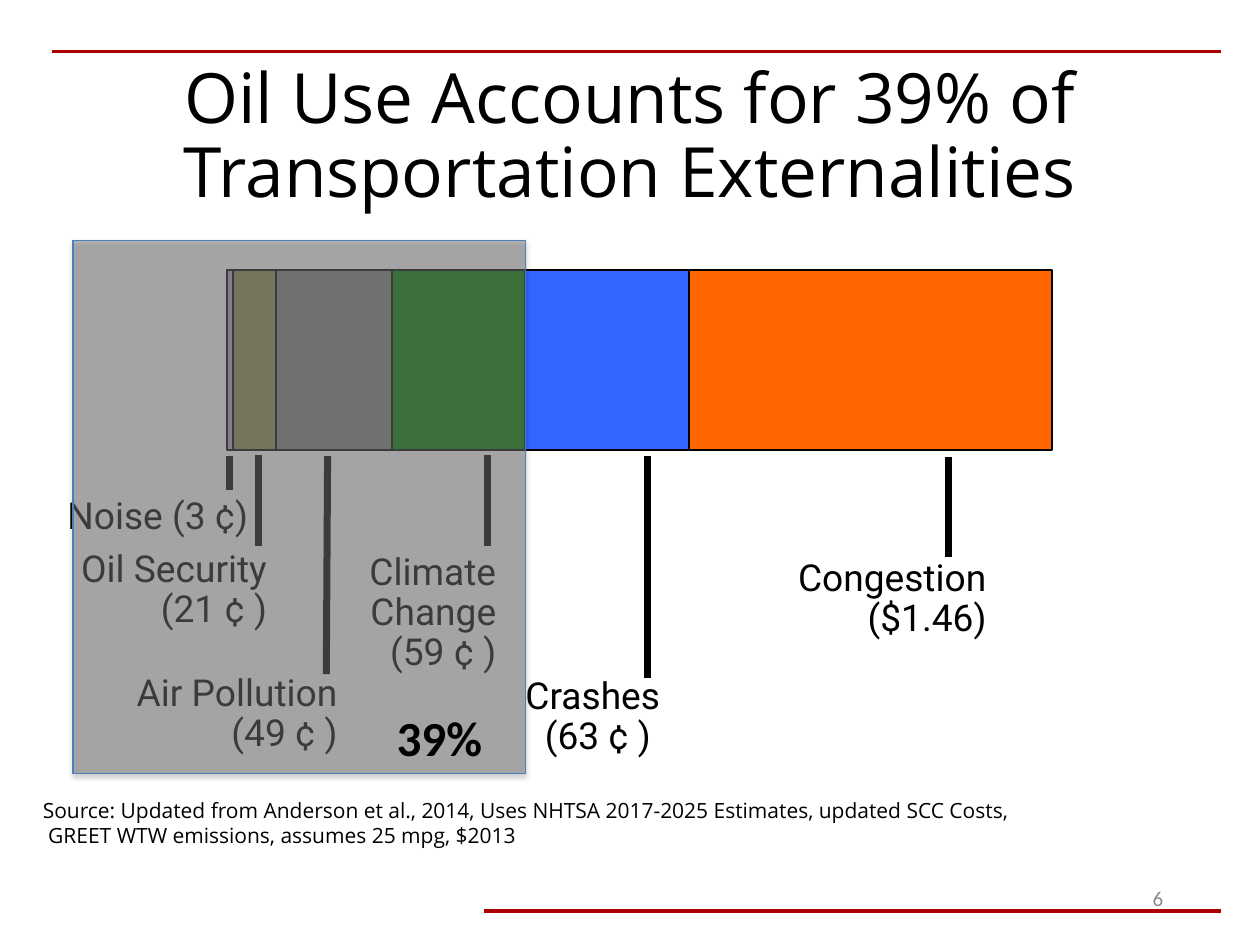
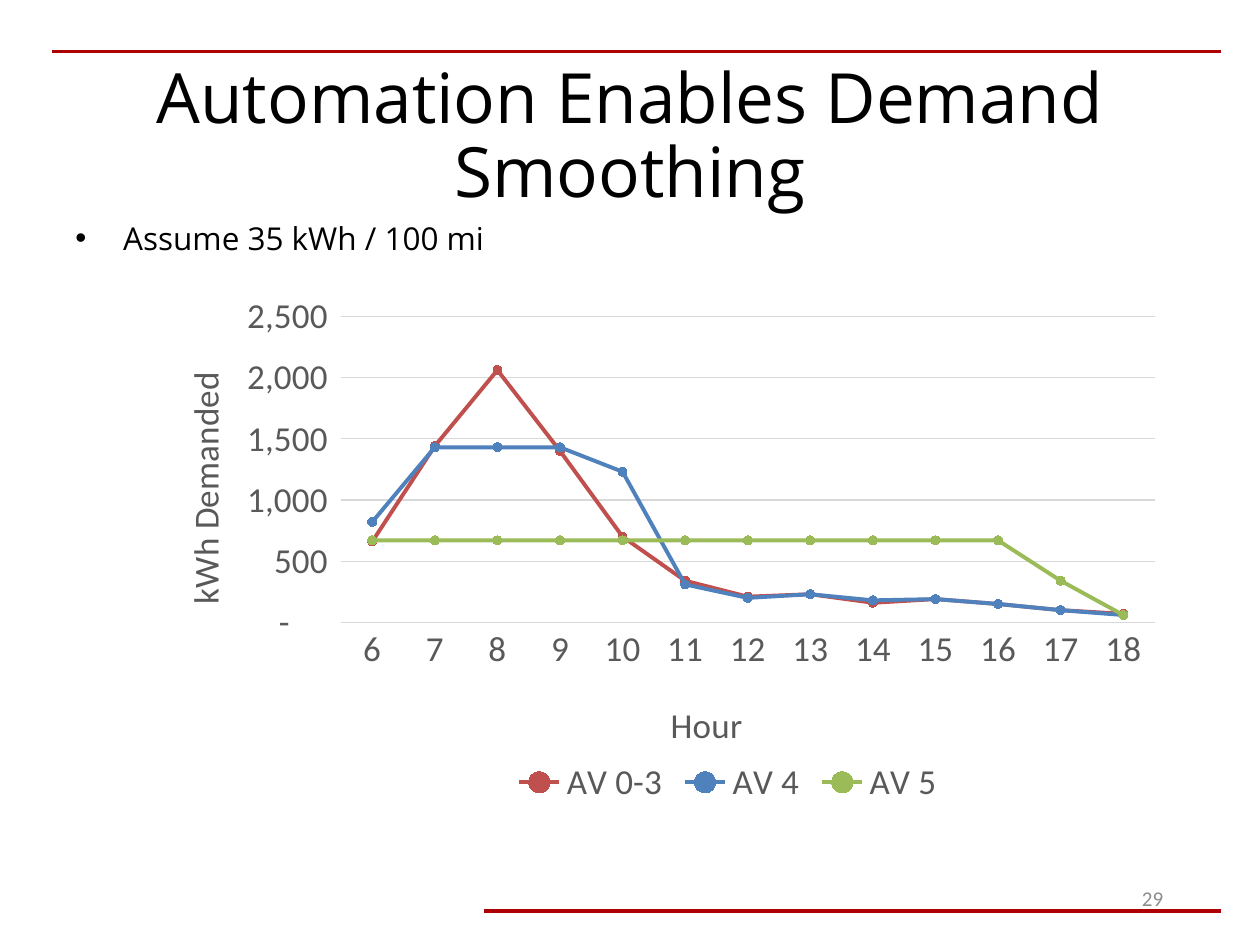
from lxml import etree
from pptx import Presentation
from pptx.chart.data import CategoryChartData
from pptx.dml.color import RGBColor
from pptx.enum.chart import XL_CHART_TYPE, XL_LEGEND_POSITION, XL_MARKER_STYLE, XL_TICK_MARK
from pptx.enum.shapes import MSO_CONNECTOR, MSO_SHAPE
from pptx.enum.text import MSO_ANCHOR, PP_ALIGN
from pptx.oxml import parse_xml
from pptx.oxml.ns import nsdecls, qn
from pptx.util import Inches, Pt

COLORS = {
    "rule": "AC0004", "text": "000000", "number": "8C8C8C",
    "congestion": "FF6600", "crashes": "3366FF", "climate": "008000",
    "security": "948A54", "pollution": "808080", "noise": "B3A2C7",
    "overlay": "777777", "overlay_line": "4B7EBC",
    "chart_text": "595959", "grid": "D9D9D9",
    "AV 0-3": "C0504D", "AV 4": "4F81BD", "AV 5": "9BBB59",
}
TITLE_FONT, LABEL_FONT, NUMBER_FONT = "Open Sans", "Roboto", "Calibri"

# Bar segments from back to front: colour, left, width
SEGMENTS = [
    ("congestion", 5.47, 2.88), ("crashes", 4.17, 1.3), ("climate", 2.98, 1.19),
    ("security", 1.84, 0.41), ("pollution", 2.19, 0.92), ("noise", 1.8, 0.05),
]
# Labels: text, left, top, width, height, alignment
LABELS = [
    ("Oil Security (21 ¢ )", 0.58, 4.37, 1.54, 0.5, PP_ALIGN.RIGHT),
    ("Air Pollution (49 ¢ )", 1.08, 5.35, 1.6, 0.74, PP_ALIGN.RIGHT),
    ("Climate Change (59 ¢ )", 2.68, 4.39, 1.26, 0.99, PP_ALIGN.RIGHT),
    ("Congestion ($1.46)", 6.21, 4.44, 1.62, 0.64, PP_ALIGN.RIGHT),
    ("Crashes (63 ¢ ) ", 4, 5.38, 1.24, 0.5, PP_ALIGN.RIGHT),
    ("Noise (3 ¢) ", 0.47, 3.95, 1.64, 0.25, PP_ALIGN.CENTER),
]
# Leader lines: start x, start y, end x, end y
LEADERS = [
    (1.82, 3.62, 1.82, 3.89), (2.05, 3.61, 2.05, 4.33), (7.53, 3.63, 7.53, 4.42),
    (5.14, 3.62, 5.14, 5.38), (2.6, 3.62, 2.59, 5.35), (3.87, 3.61, 3.87, 4.33),
]
DEMAND = {
    "AV 0-3": (660, 1440, 2060, 1400, 700, 340, 210, 230, 160, 190, 150, 100, 70),
    "AV 4": (820, 1430, 1430, 1430, 1230, 310, 200, 230, 180, 190, 150, 100, 60),
    "AV 5": (670,) * 11 + (340, 60),
}


def color(name):
    return RGBColor.from_string(COLORS[name])


def style_font(font, size, name, color_name="text", bold=False):
    font.size, font.name, font.bold = Pt(size), name, bold
    font.color.rgb = color(color_name)


def add_text(slide, box, lines, size, font, color_name="text", bold=False,
             align=PP_ALIGN.LEFT, anchor=MSO_ANCHOR.TOP, insets=(0.1, 0.05, 0.1, 0.05),
             spacing=None):
    shape = slide.shapes.add_textbox(*map(Inches, box))
    frame = shape.text_frame
    frame.word_wrap = True
    frame.vertical_anchor = anchor
    (frame.margin_left, frame.margin_top,
     frame.margin_right, frame.margin_bottom) = map(Inches, insets)
    for index, line in enumerate(lines):
        paragraph = frame.add_paragraph() if index else frame.paragraphs[0]
        paragraph.alignment = align
        if spacing:
            paragraph.line_spacing = spacing
        run = paragraph.add_run()
        run.text = line
        style_font(run.font, size, font, color_name, bold)
    return shape


def add_line(slide, ends, color_name, width):
    connector = slide.shapes.add_connector(MSO_CONNECTOR.STRAIGHT, *map(Inches, ends))
    connector.line.color.rgb = color(color_name)
    connector.line.width = Pt(width)
    etree.SubElement(connector._element.spPr, qn("a:effectLst"))


def add_rectangle(slide, box, fill, line, width):
    shape = slide.shapes.add_shape(MSO_SHAPE.RECTANGLE, *map(Inches, box))
    shape.shadow.inherit = False
    shape.fill.solid()
    shape.fill.fore_color.rgb = color(fill)
    shape.line.color.rgb = color(line)
    shape.line.width = Pt(width)
    return shape


def add_overlay(slide, box):
    """Half transparent panel with a soft shadow below it."""
    properties = add_rectangle(slide, box, "overlay", "overlay_line", 0.75)._element.spPr
    fill_color = properties.find(qn("a:solidFill")).find(qn("a:srgbClr"))
    etree.SubElement(fill_color, qn("a:alpha"), val="50000")
    properties.find(qn("a:effectLst")).append(parse_xml(
        f'<a:outerShdw {nsdecls("a")} blurRad="{Pt(3.1)}" dist="{Pt(1.8)}" dir="5400000" '
        'rotWithShape="0"><a:srgbClr val="000000"><a:alpha val="35000"/></a:srgbClr>'
        '</a:outerShdw>'))


def add_base_slide(presentation, title, number):
    """Blank slide with the shared rules, title and page number."""
    slide = presentation.slides.add_slide(presentation.slide_layouts[6])
    add_line(slide, (3.84, 7.23, 9.69, 7.23), "rule", 2)
    add_line(slide, (0.41, 0.41, 9.69, 0.41), "rule", 2)
    add_text(slide, (0.5, 0.54, 9, 1.01), [title], 39.6, TITLE_FONT,
             align=PP_ALIGN.CENTER, anchor=MSO_ANCHOR.MIDDLE,
             insets=(0.1, 0.15, 0.1, 0.05), spacing=0.9)
    add_text(slide, (7.08, 6.93, 2.25, 0.4), [number], 12, NUMBER_FONT, "number",
             align=PP_ALIGN.RIGHT, anchor=MSO_ANCHOR.MIDDLE)
    return slide


def add_bullet(slide, box, text):
    shape = add_text(slide, box, [text], 18, TITLE_FONT)
    properties = shape.text_frame.paragraphs[0]._p.get_or_add_pPr()
    properties.set("marL", str(Inches(0.38)))
    properties.set("indent", str(-Inches(0.38)))
    etree.SubElement(properties, qn("a:buFont"), typeface="Arial")
    etree.SubElement(properties, qn("a:buChar"), char="•")


def place_chart_part(element, index, **fractions):
    """Fix a chart part at x, y (and w, h) as fractions of the chart."""
    for old in element.findall(qn("c:layout")):
        element.remove(old)
    layout = etree.Element(qn("c:layout"))
    manual = etree.SubElement(layout, qn("c:manualLayout"))
    if "w" in fractions:
        etree.SubElement(manual, qn("c:layoutTarget"), val="inner")
    for key in ("x", "y"):
        etree.SubElement(manual, qn(f"c:{key}Mode"), val="edge")
    for key, value in fractions.items():
        etree.SubElement(manual, qn(f"c:{key}"), val=str(value))
    element.insert(index, layout)


def style_axis(axis, title, x, y):
    axis.major_tick_mark = axis.minor_tick_mark = XL_TICK_MARK.NONE
    style_font(axis.tick_labels.font, 20, NUMBER_FONT, "chart_text")
    frame = axis.axis_title.text_frame
    run = frame.paragraphs[0].add_run()
    run.text = title
    style_font(run.font, 20, NUMBER_FONT, "chart_text")
    place_chart_part(axis.axis_title._element, 1, x=x, y=y)
    return frame


def add_demand_chart(slide, box):
    data = CategoryChartData()
    data.categories = [str(hour) for hour in range(6, 19)]
    for name, values in DEMAND.items():
        data.add_series(name, values)
    chart = slide.shapes.add_chart(
        XL_CHART_TYPE.LINE_MARKERS, *map(Inches, box), data).chart
    chart.has_title = False
    style_font(chart.font, 10, NUMBER_FONT)

    # Series
    chart.plots[0].vary_by_categories = False
    for series in chart.plots[0].series:
        series.smooth = False
        series.format.line.color.rgb = color(series.name)
        series.format.line.width = Pt(2.25)
        marker = series.marker
        marker.style, marker.size = XL_MARKER_STYLE.CIRCLE, 5
        marker.format.fill.solid()
        marker.format.fill.fore_color.rgb = color(series.name)
        marker.format.line.color.rgb = color(series.name)

    # Axes
    hours, demand = chart.category_axis, chart.value_axis
    style_axis(hours, "Hour", 0.51, 0.75)
    title_frame = style_axis(demand, "kWh Demanded", 0.04, 0.15)
    title_frame._txBody.bodyPr.set("rot", "-5400000")
    title_frame._txBody.bodyPr.set("vert", "horz")
    demand.minimum_scale, demand.maximum_scale, demand.major_unit = 0, 2500, 500
    demand.tick_labels.number_format = '_(* #,##0_);_(* \\(#,##0\\);_(* "-"??_);_('
    demand.tick_labels.number_format_is_linked = False
    demand.format.line.fill.background()
    for line in (hours.format.line, demand.major_gridlines.format.line):
        line.color.rgb = color("grid")
        line.width = Pt(0.75)

    # Legend and plot area
    chart.has_legend = True
    chart.legend.position = XL_LEGEND_POSITION.BOTTOM
    chart.legend.include_in_layout = False
    style_font(chart.legend.font, 20, NUMBER_FONT, "chart_text")
    place_chart_part(chart.legend._element, 1, x=0.36, y=0.86)
    plot_area = chart._chartSpace.chart.plotArea
    place_chart_part(plot_area, 0, x=0.2, y=0.06, w=0.78, h=0.56)


def build_externalities_slide(presentation):
    slide = add_base_slide(
        presentation, "Oil Use Accounts for 39% of Transportation Externalities", "6")
    for name, left, width in SEGMENTS:
        add_rectangle(slide, (left, 2.14, width, 1.43), name, "text", 1.25)
    for text, *box, align in LABELS:
        add_text(slide, box, [text], 21.2, LABEL_FONT, align=align,
                 insets=(0, 0, 0, 0), spacing=0.9)
    for ends in LEADERS:
        add_line(slide, ends, "text", 4)
    add_overlay(slide, (0.58, 1.91, 3.59, 4.23))
    add_text(slide, (3.05, 5.57, 0.95, 0.57), ["39%"], 28, NUMBER_FONT, bold=True)
    add_text(slide, (0.23, 6.27, 9.1, 0.52), [
        "Source: Updated from Anderson et al., 2014, Uses NHTSA 2017-2025 Estimates, "
        "updated SCC Costs,",
        " GREET WTW emissions, assumes 25 mpg, $2013",
    ], 12, TITLE_FONT, insets=(0.11, 0.06, 0.11, 0.06))


def build_demand_slide(presentation):
    slide = add_base_slide(presentation, "Automation Enables Demand Smoothing", "29")
    add_bullet(slide, (0.5, 1.69, 9, 4.95), "Assume 35 kWh / 100 mi")
    add_demand_chart(slide, (1.05, 2.25, 8.28, 4.34))


def main():
    presentation = Presentation()
    presentation.slide_width, presentation.slide_height = Inches(10), Inches(7.5)
    build_externalities_slide(presentation)
    build_demand_slide(presentation)
    presentation.save("out.pptx")


if __name__ == "__main__":
    main()
